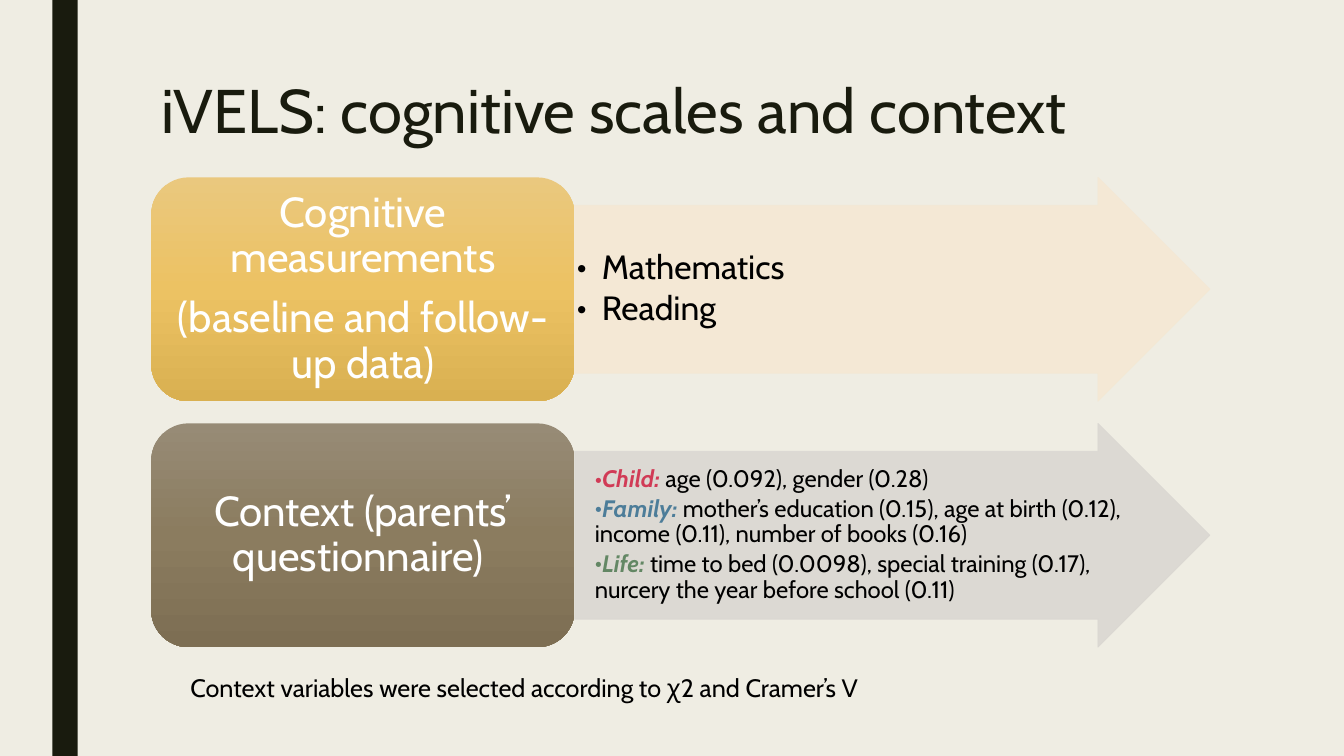
from copy import deepcopy
from dataclasses import dataclass
from typing import Any

from lxml.etree import SubElement as Sub
from pptx import Presentation
from pptx.dml.color import RGBColor as RGB
from pptx.enum.shapes import MSO_SHAPE as Kind
from pptx.enum.text import MSO_ANCHOR as Anchor, PP_ALIGN as Align
from pptx.oxml.ns import qn
from pptx.util import Inches, Pt

FONT = "Cabin"
INK = "191B0E"
BLACK = "000000"
WHITE = "FFFFFF"
LEFT, SPLIT, PAD = 1.5, 5.7, 0.11
HEAD, ARROW, TALL = 4.2, 6.3, 2.22
TOP, STEP = 1.76, 2.44


@dataclass(frozen=True)
class Run:
    text: str
    color: str = BLACK
    strong: bool = False


@dataclass(frozen=True)
class Style:
    size: float
    align: Any = Align.LEFT
    anchor: Any = Anchor.TOP
    lines: float = 1.0
    after: float = 0
    inset: tuple[float, float] = (0.1, 0.05)
    bullet: tuple[float, float] | None = None


@dataclass(frozen=True)
class Band:
    heads: list[list[Run]]
    points: list[list[Run]]
    shades: list[str]
    tint: str
    style: Style


TITLE = Style(44, lines=0.89)
LABEL = Style(30, Align.CENTER, Anchor.MIDDLE, 0.9, 10.5, (0.12, 0.06))
NOTE = Style(18)

BANDS = [
    Band(
        [[Run("Cognitive measurements", WHITE)], [Run("(baseline and follow-up data)", WHITE)]],
        [[Run("Mathematics")], [Run("Reading")]],
        ["EAC87E", "ECC263", "D9B051"],
        "F5E8D4",
        Style(24, Align.LEFT, Anchor.MIDDLE, 0.9, 3.6, (0.02, 0.02), (0.25, -0.25)),
    ),
    Band(
        [[Run("Context (parents’ questionnaire) ", WHITE)]],
        [
            [Run("Child:", "D13B56", True), Run(" age (0.092), gender (0.28)")],
            [
                Run("Family:", "4D7D99", True),
                Run(" mother’s education (0.15), age at birth (0.12), income (0.11), number of books (0.16)"),
            ],
            [
                Run("Life:", "638764", True),
                Run(" time to bed (0.0098), special training (0.17), nurcery the year before school (0.11)"),
            ],
        ],
        ["978B76", "8B7C5F", "7D6E53"],
        "DAD7D2",
        Style(17, Align.LEFT, Anchor.MIDDLE, 0.9, 2.6, (0.01, 0.01), (0.19, 0)),
    ),
]


def rgb(code: str) -> RGB:
    return RGB.from_string(code)


def apply(item: Any, form: dict[str, Any]) -> None:
    for name, value in form.items():
        setattr(item, name, value)


def shape(slide: Any, kind: Any, x: float, y: float, w: float, h: float) -> Any:
    item = slide.shapes.add_shape(kind, Inches(x), Inches(y), Inches(w), Inches(h))
    item.shadow.inherit = False
    item.line.fill.background()
    return item


def paint(item: Any, color: str) -> None:
    item.fill.solid()
    item.fill.fore_color.rgb = rgb(color)


def blend(item: Any, shades: list[str]) -> None:
    fill = item.fill
    fill.gradient()
    fill.gradient_angle = 270
    first = item._element.spPr.find(".//" + qn("a:gs"))
    first.addnext(deepcopy(first))
    for i, (stop, shade) in enumerate(zip(fill.gradient_stops, shades)):
        stop.position = i / (len(shades) - 1)
        stop.color.rgb = rgb(shade)


def arrow(slide: Any, y: float, tint: str) -> None:
    item = shape(slide, Kind.RIGHT_ARROW, SPLIT, y, ARROW, TALL)
    item.adjustments[0] = 0.75
    item.adjustments[1] = 0.5
    paint(item, tint)
    item.line.color.rgb = rgb(tint)
    item.line.width = Pt(0.5)
    for color in item._element.spPr.iter(qn("a:srgbClr")):
        Sub(color, qn("a:alpha"), val="90000")


def write(slide: Any, x: float, y: float, w: float, h: float, paras: list[list[Run]], style: Style) -> None:
    frame = slide.shapes.add_textbox(Inches(x), Inches(y), Inches(w), Inches(h)).text_frame
    side, edge = map(Inches, style.inset)
    apply(frame, {
        "word_wrap": True, "vertical_anchor": style.anchor,
        "margin_left": side, "margin_right": side,
        "margin_top": edge, "margin_bottom": edge,
    })
    for i, runs in enumerate(paras):
        para = frame.add_paragraph() if i else frame.paragraphs[0]
        apply(para, {
            "alignment": style.align, "line_spacing": style.lines,
            "space_after": Pt(style.after), "level": 1 if style.bullet else 0,
        })
        if style.bullet:
            props = para._p.get_or_add_pPr()
            for name, value in zip(("marL", "indent"), style.bullet):
                props.set(name, str(Inches(value)))
            Sub(props, qn("a:buFont"), typeface=FONT)
            Sub(props, qn("a:buChar"), char="•")
        for run in runs:
            part = para.add_run()
            part.text = run.text
            apply(part.font, {
                "name": FONT, "size": Pt(style.size),
                "bold": run.strong, "italic": run.strong,
            })
            part.font.color.rgb = rgb(run.color)


def draw(slide: Any, y: float, band: Band) -> None:
    arrow(slide, y, band.tint)
    write(slide, SPLIT, y + TALL / 8, 5.47, TALL * 0.75, band.points, band.style)
    blend(shape(slide, Kind.ROUNDED_RECTANGLE, LEFT, y, HEAD, TALL), band.shades)
    write(slide, LEFT + PAD, y + PAD, HEAD - 2 * PAD, TALL - 2 * PAD, band.heads, LABEL)


def main() -> None:
    deck = Presentation()
    apply(deck, {"slide_width": Inches(13.33), "slide_height": Inches(7.5)})
    slide = deck.slides.add_slide(deck.slide_layouts[6])
    paint(slide.background, "EFEDE3")
    paint(shape(slide, Kind.RECTANGLE, 0.52, 0, 0.25, 7.5), INK)
    write(slide, LEFT, 0.75, 10.5, 1.01, [[Run("iVELS: cognitive scales and context", INK)]], TITLE)
    for i, band in enumerate(BANDS):
        draw(slide, TOP + i * STEP, band)
    note = "Context variables were selected according to χ2 and Cramer’s V"
    write(slide, 1.79, 6.62, 7.54, 0.4, [[Run(note)]], NOTE)
    deck.save("out.pptx")


if __name__ == "__main__":
    main()
